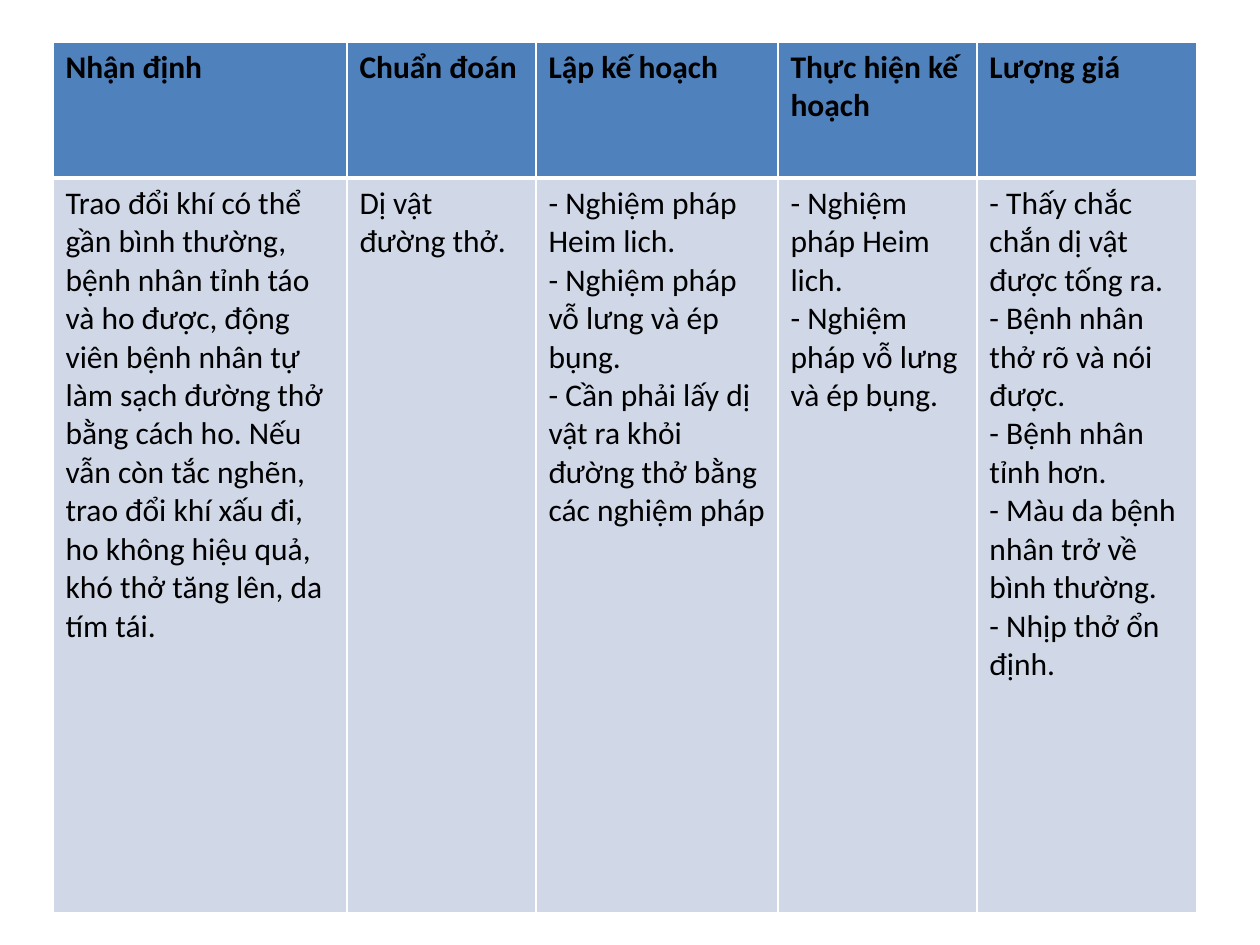
from dataclasses import dataclass

from lxml import etree
from pptx import Presentation, util as u
from pptx.dml import color
from pptx.oxml import ns
from pptx.table import Table, _Cell

PX_PER_INCH = 126


@dataclass(frozen=True)
class Theme:
    font: str = "Calibri"
    size: int = 18
    ink: str = "000000"
    header_fill: str = "4F81BD"
    body_fill: str = "D0D8E8"
    rule: str = "FFFFFF"
    thin: int = 1
    thick: int = 3


@dataclass(frozen=True)
class Stage:
    heading: str
    width: int
    details: tuple[str, ...]


@dataclass(frozen=True)
class RowStyle:
    height: int
    fill: str
    bold: bool
    borders: dict[str, int]


THEME = Theme()
LEFT, TOP = 53, 42
THIN_SIDES = dict.fromkeys("LRTB", THEME.thin)
HEADER = RowStyle(136, THEME.header_fill, True, THIN_SIDES | {"B": THEME.thick})
BODY = RowStyle(735, THEME.body_fill, False, THIN_SIDES | {"T": THEME.thick})

MANEUVERS = (
    "- Nghiệm pháp Heim lich.",
    "- Nghiệm pháp vỗ lưng và ép bụng.",
)
STAGES = (
    Stage("Nhận định", 294, (
        "Trao đổi khí có thể gần bình thường, bệnh nhân tỉnh táo và ho được, "
        "động viên bệnh nhân tự làm sạch đường thở bằng cách ho. Nếu vẫn còn "
        "tắc nghẽn, trao đổi khí xấu đi, ho không hiệu quả, khó thở tăng lên, "
        "da tím tái.",
    )),
    Stage("Chuẩn đoán", 189, ("Dị vật đường thở.",)),
    Stage("Lập kế hoạch", 242, MANEUVERS + (
        "- Cần phải lấy dị vật ra khỏi đường thở bằng các nghiệm pháp",
    )),
    Stage("Thực hiện kế hoạch", 199, MANEUVERS),
    Stage("Lượng giá", 220, (
        "- Thấy chắc chắn dị vật được tống ra.",
        "- Bệnh nhân thở rõ và nói được.",
        "- Bệnh nhân tỉnh hơn.",
        "- Màu da bệnh nhân trở về bình thường.",
        "- Nhịp thở ổn định.",
    )),
)


def px(length: int) -> u.Emu:
    return u.Emu(round(length * u.Inches(1) / PX_PER_INCH))


def draw_borders(cell: _Cell, borders: dict[str, int]) -> None:
    properties = cell._tc.get_or_add_tcPr()
    for position, (side, width) in enumerate(borders.items()):
        border = etree.Element(ns.qn(f"a:ln{side}"), w=str(u.Pt(width)))
        fill = etree.SubElement(border, ns.qn("a:solidFill"))
        etree.SubElement(fill, ns.qn("a:srgbClr"), val=THEME.rule)
        properties.insert(position, border)


def fill_cell(cell: _Cell, lines: tuple[str, ...], style: RowStyle) -> None:
    cell.fill.solid()
    cell.fill.fore_color.rgb = color.RGBColor.from_string(style.fill)
    draw_borders(cell, style.borders)
    cell.text = "\n".join(lines)
    formats = {"name": THEME.font, "size": u.Pt(THEME.size), "bold": style.bold}
    for paragraph in cell.text_frame.paragraphs:
        for run in paragraph.runs:
            for attribute, value in formats.items():
                setattr(run.font, attribute, value)
            run.font.color.rgb = color.RGBColor.from_string(THEME.ink)


def draw_care_plan(care_plan: Table) -> None:
    for row, style in zip(care_plan.rows, (HEADER, BODY)):
        row.height = px(style.height)
    for index, stage in enumerate(STAGES):
        care_plan.columns[index].width = px(stage.width)
        fill_cell(care_plan.cell(0, index), (stage.heading,), HEADER)
        fill_cell(care_plan.cell(1, index), stage.details, BODY)


def main() -> None:
    deck = Presentation()
    deck.slide_width, deck.slide_height = px(1260), px(945)
    slide = deck.slides.add_slide(deck.slide_layouts[6])
    width = sum(stage.width for stage in STAGES)
    height = HEADER.height + BODY.height
    frame = slide.shapes.add_table(
        2, len(STAGES), px(LEFT), px(TOP), px(width), px(height)
    )
    draw_care_plan(frame.table)
    deck.save("out.pptx")


if __name__ == "__main__":
    main()
